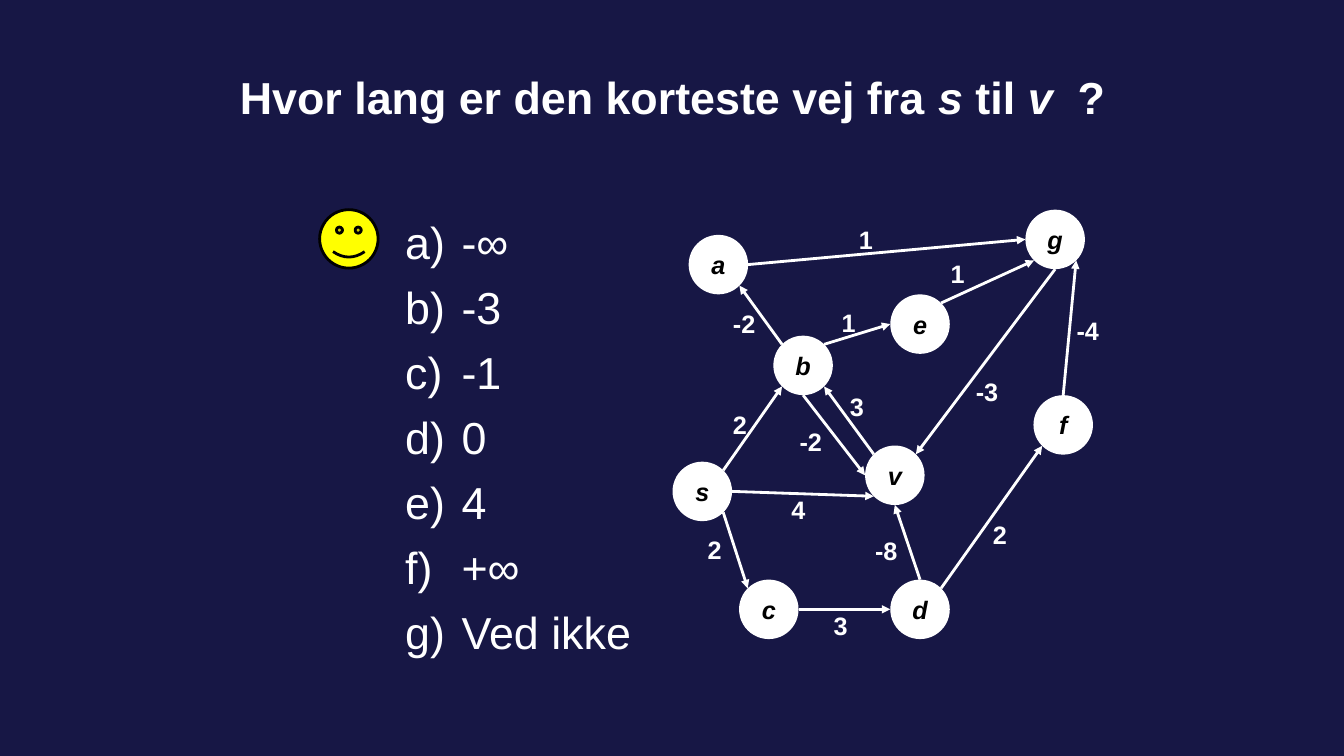
from math import sqrt

from lxml import etree
from pptx import Presentation
from pptx.dml.color import RGBColor
from pptx.enum.shapes import MSO_CONNECTOR, MSO_SHAPE
from pptx.enum.text import MSO_ANCHOR, MSO_AUTO_SIZE, PP_ALIGN
from pptx.oxml.ns import qn
from pptx.util import Inches, Pt

STRAIGHT = MSO_CONNECTOR.STRAIGHT
OVAL, SMILEY = MSO_SHAPE.OVAL, MSO_SHAPE.SMILEY_FACE
TOP, MIDDLE = MSO_ANCHOR.TOP, MSO_ANCHOR.MIDDLE
LEFT, CENTER, RIGHT = PP_ALIGN.LEFT, PP_ALIGN.CENTER, PP_ALIGN.RIGHT
GROW = MSO_AUTO_SIZE.SHAPE_TO_FIT_TEXT

# (text, italic)
TITLE = [("Hvor lang er den korteste vej fra ", False), ("s", True),
         (" til ", False), ("v", True), ("  ?", False)]
ANSWERS = ["-∞", "-3", "-1", "0", "4", "+∞", "Ved ikke"]

# name: left, top
NODES = {
    "a": (6.83, 2.33), "b": (7.67, 3.33), "c": (7.33, 5.75),
    "d": (8.83, 5.75), "e": (8.83, 2.92), "f": (10.25, 3.92),
    "g": (10.17, 2.08), "s": (6.67, 4.58), "v": (8.58, 4.42),
}
# start node and side, end node and side, weight, label left, top, width, alignment
EDGES = [
    ("s", "NE", "b", "SW", "2", 7.17, 4.01, 0.33, LEFT),
    ("a", "E", "g", "W", "1", 8.42, 2.18, 0.33, LEFT),
    ("s", "SE", "c", "NW", "2", 6.92, 5.25, 0.33, LEFT),
    ("g", "S", "v", "NE", "-3", 9.58, 3.68, 0.5, LEFT),
    ("v", "NW", "b", "SE", "3", 8.33, 3.83, 0.33, LEFT),
    ("b", "S", "v", "W", "-2", 7.67, 4.18, 0.58, RIGHT),
    ("c", "E", "d", "W", "3", 8.17, 6.01, 0.33, LEFT),
    ("b", "NW", "a", "SE", "-2", 6.92, 3.01, 0.67, RIGHT),
    ("s", "E", "v", "SW", "4", 7.75, 4.85, 0.33, LEFT),
    ("d", "NE", "f", "SW", "2", 9.75, 5.1, 0.33, LEFT),
    ("f", "N", "g", "SE", "-4", 10.58, 3.08, 0.67, LEFT),
    ("e", "NE", "g", "SW", "1", 9.33, 2.51, 0.33, LEFT),
    ("b", "NE", "e", "W", "1", 8.25, 3, 0.33, LEFT),
    ("d", "N", "v", "S", "-8", 8.33, 5.26, 0.67, RIGHT),
]

THEME = {
    "font": "Arial",
    "background": RGBColor(0x17, 0x17, 0x45),
    "light": RGBColor(0xFF, 0xFF, 0xFF),
    "dark": RGBColor(0, 0, 0),
    "smiley": RGBColor(0xFF, 0xFF, 0),
    "large": Pt(32),
    "small": Pt(18),
    "line": Pt(2),
}
NODE_SIZE = 0.59
LABEL_HEIGHT = 0.4


def write(para, text, size, color=THEME["light"], bold=False, italic=False, align=LEFT):
    para.alignment = align
    span = para.add_run()
    span.text = text
    font = span.font
    font.name, font.size, font.color.rgb = THEME["font"], size, color
    font.bold, font.italic = bold, italic


def add_text_frame(page, left, top, width, height, anchor=TOP):
    box = page.shapes.add_textbox(*map(Inches, (left, top, width, height)))
    frame = box.text_frame
    frame.word_wrap = True
    frame.vertical_anchor = anchor
    return frame


def add_filled(page, kind, left, top, size, color):
    shape = page.shapes.add_shape(kind, *map(Inches, (left, top, size, size)))
    shape.shadow.inherit = False
    shape.fill.solid()
    shape.fill.fore_color.rgb = color
    shape.line.fill.background()
    return shape


def add_title(page):
    para = add_text_frame(page, 1.67, 0.25, 10, 1.42, MIDDLE).paragraphs[0]
    for text, italic in TITLE:
        write(para, text, THEME["large"], bold=True, italic=italic, align=CENTER)


def add_answers(page):
    frame = add_text_frame(page, 3.92, 2.08, 2.73, 4.5)
    for index, answer in enumerate(ANSWERS):
        para = frame.add_paragraph() if index else frame.paragraphs[0]
        write(para, answer, THEME["large"])
        para.space_before = Pt(8)
        properties = para._p.get_or_add_pPr()
        properties.set("marL", str(Inches(0.56)))
        properties.set("indent", str(-Inches(0.56)))
        bullet_font = etree.SubElement(properties, qn("a:buFont"))
        bullet_font.set("typeface", THEME["font"])
        etree.SubElement(properties, qn("a:buAutoNum")).set("type", "alphaLcParenR")


def add_node(page, name, left, top):
    node = add_filled(page, OVAL, left, top, NODE_SIZE, THEME["light"])
    frame = node.text_frame
    frame.word_wrap = False
    frame.vertical_anchor = MIDDLE
    write(frame.paragraphs[0], name, THEME["small"], color=THEME["dark"],
          bold=True, italic=True, align=CENTER)


def rim_point(name, side):
    """Point on a node's circle in a compass direction."""
    radius = NODE_SIZE / 2
    reach = radius / sqrt(len(side))
    left, top = NODES[name]
    x = left + radius + reach * (("E" in side) - ("W" in side))
    y = top + radius + reach * (("S" in side) - ("N" in side))
    return Inches(x), Inches(y)


def add_arrow(page, start, end):
    arrow = page.shapes.add_connector(STRAIGHT, *start, *end)
    arrow.line.color.rgb = THEME["light"]
    arrow.line.width = THEME["line"]
    head = etree.SubElement(arrow.line._get_or_add_ln(), qn("a:tailEnd"))
    head.set("type", "triangle")
    etree.SubElement(arrow._element.spPr, qn("a:effectLst"))


def add_weight(page, weight, left, top, width, align):
    frame = add_text_frame(page, left, top, width, LABEL_HEIGHT)
    frame.auto_size = GROW
    write(frame.paragraphs[0], weight, THEME["small"], bold=True, align=align)


def main():
    deck = Presentation()
    deck.slide_width, deck.slide_height = Inches(13.33), Inches(7.5)
    page = deck.slides.add_slide(deck.slide_layouts[6])
    page.background.fill.solid()
    page.background.fill.fore_color.rgb = THEME["background"]

    add_answers(page)
    add_title(page)
    smiley = add_filled(page, SMILEY, 3.17, 2.08, 0.58, THEME["smiley"])
    smiley.line.color.rgb = THEME["dark"]
    smiley.line.width = THEME["line"]

    for name, (left, top) in NODES.items():
        add_node(page, name, left, top)
    for start, start_side, end, end_side, *_ in EDGES:
        add_arrow(page, rim_point(start, start_side), rim_point(end, end_side))
    for *_, weight, left, top, width, align in EDGES:
        add_weight(page, weight, left, top, width, align)

    deck.save("out.pptx")


if __name__ == "__main__":
    main()
